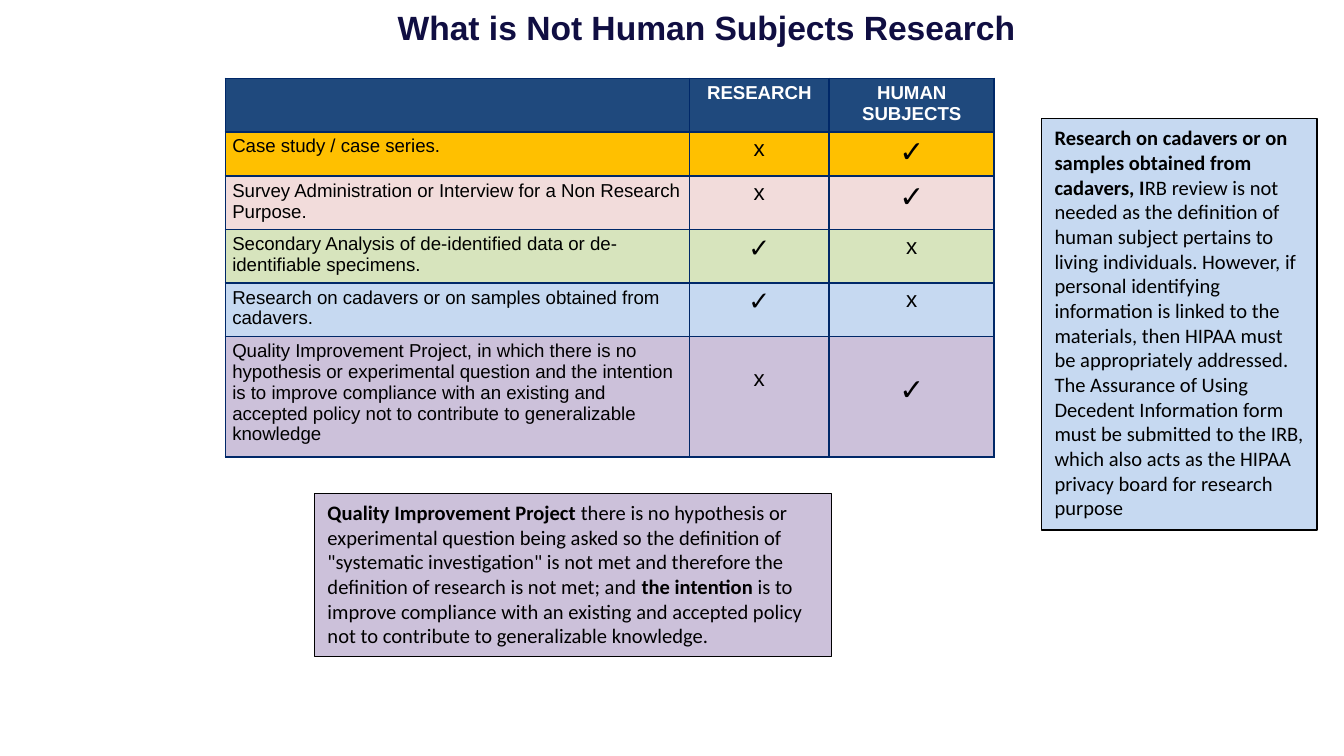
from dataclasses import dataclass

import pptx
import pptx.dml.color
import pptx.enum.shapes
import pptx.enum.text
import pptx.oxml
import pptx.oxml.ns
import pptx.util
from pptx.dml.color import RGBColor
from pptx.util import Cm

WHITE = RGBColor(0xFF, 0xFF, 0xFF)
BLACK = RGBColor(0x00, 0x00, 0x00)
TITLE_NAVY = RGBColor(0x10, 0x0E, 0x42)
BORDER_NAVY = RGBColor(0x00, 0x28, 0x68)
HEADER_BLUE = RGBColor(0x1F, 0x49, 0x7D)
AMBER = RGBColor(0xFF, 0xC0, 0x00)
ROSE = RGBColor(0xF2, 0xDC, 0xDB)
GREEN = RGBColor(0xD7, 0xE4, 0xBD)
SKY = RGBColor(0xC6, 0xD9, 0xF1)
LILAC = RGBColor(0xCC, 0xC1, 0xDA)

LEFT = pptx.enum.text.PP_ALIGN.LEFT
CENTER = pptx.enum.text.PP_ALIGN.CENTER
TOP = pptx.enum.text.MSO_ANCHOR.TOP
CELL_MARGIN_TOP = 0.08


@dataclass(frozen=True)
class CellText:
    text: str
    size: int = 10
    align: int = CENTER
    margin_top: float = CELL_MARGIN_TOP


@dataclass(frozen=True)
class TableRow:
    height: float
    fill: RGBColor
    cells: tuple[CellText, ...]
    color: RGBColor = BLACK
    bold: bool = False


@dataclass(frozen=True)
class Run:
    text: str
    bold: bool = False


@dataclass(frozen=True)
class Note:
    left: float
    top: float
    width: float
    height: float
    fill: RGBColor
    runs: tuple[Run, ...]


def topic(text: str) -> CellText:
    return CellText(text, align=LEFT)


NO = CellText("x", 12)
YES = CellText("✓", 14)
LARGE_YES = CellText("✓", 16)

COLUMN_WIDTHS = (8.77, 2.64, 3.12)
ROWS = (
    TableRow(0.93, HEADER_BLUE, (CellText(""), CellText("RESEARCH"), CellText("HUMAN SUBJECTS")), WHITE, True),
    TableRow(0.75, AMBER, (topic("Case study / case series."), NO, LARGE_YES)),
    TableRow(0.92, ROSE, (
        topic("Survey Administration or Interview for a Non Research Purpose."), NO, LARGE_YES)),
    TableRow(0.92, GREEN, (
        topic("Secondary Analysis of de-identified data or de-identifiable specimens."), YES, NO)),
    TableRow(0.92, SKY, (
        topic("Research on cadavers or on samples obtained from cadavers."), YES, NO)),
    TableRow(2.1, LILAC, (
        topic("Quality Improvement Project, in which there is no hypothesis or experimental question "
              "and the intention is to improve compliance with an existing and accepted policy "
              "not to contribute to generalizable knowledge"),
        CellText("x", 12, margin_top=0.56),
        CellText("✓", 16, margin_top=0.7))),
)

NOTES = (
    Note(19.68, 2.24, 5.21, 7.77, SKY, (
        Run("Research on cadavers or on samples obtained from cadavers, I", True),
        Run("RB review is not needed as the definition of human subject pertains to living "
            "individuals. However, if personal identifying information is linked to the materials, "
            "then HIPAA must be appropriately addressed. The Assurance of Using Decedent "
            "Information form must be submitted to the IRB, which also acts as the HIPAA privacy "
            "board for research purpose"))),
    Note(5.94, 9.32, 9.78, 3.08, LILAC, (
        Run("Quality Improvement Project ", True),
        Run("there is no hypothesis or experimental question being asked so the definition of "
            "\"systematic investigation\" is not met and therefore the definition of research is "
            "not met; and "),
        Run("the intention", True),
        Run(" is to improve compliance with an existing and accepted policy not to contribute to "
            "generalizable knowledge."))),
)


def style_font(paragraph, name: str, size: int, color: RGBColor) -> None:
    paragraph.font.name = name
    paragraph.font.size = pptx.util.Pt(size)
    paragraph.font.color.rgb = color


def add_title(slide, text: str) -> None:
    title = slide.shapes.add_textbox(Cm(2), Cm(-0.05), Cm(22.86), Cm(1.24))
    frame = title.text_frame
    frame.word_wrap = True
    frame.margin_top = Cm(0.18)
    frame.margin_right = Cm(0.4)
    paragraph = frame.paragraphs[0]
    paragraph.text = text
    paragraph.alignment = CENTER
    style_font(paragraph, "Arial", 18, TITLE_NAVY)
    paragraph.font.bold = True


def set_borders(cell, color: RGBColor) -> None:
    properties = cell._tc.get_or_add_tcPr()
    for position, side in enumerate(("lnL", "lnR", "lnT", "lnB")):
        border = pptx.oxml.parse_xml(
            f'<a:{side} {pptx.oxml.ns.nsdecls("a")} w="{pptx.util.Pt(1)}">'
            f'<a:solidFill><a:srgbClr val="{color}"/></a:solidFill></a:{side}>')
        properties.insert(position, border)


def fill_cell(cell, content: CellText, row: TableRow) -> None:
    cell.fill.solid()
    cell.fill.fore_color.rgb = row.fill
    cell.margin_left = cell.margin_right = Cm(0.13)
    cell.margin_top = Cm(content.margin_top)
    cell.margin_bottom = Cm(0.08)
    cell.vertical_anchor = TOP
    paragraph = cell.text_frame.paragraphs[0]
    paragraph.text = content.text
    paragraph.alignment = content.align
    style_font(paragraph, "Arial", content.size, row.color)
    paragraph.font.bold = row.bold
    set_borders(cell, BORDER_NAVY)


def add_criteria_table(slide) -> None:
    table = slide.shapes.add_table(
        len(ROWS), len(COLUMN_WIDTHS), Cm(4.26), Cm(1.48),
        Cm(sum(COLUMN_WIDTHS)), Cm(sum(row.height for row in ROWS))).table
    for column, width in zip(table.columns, COLUMN_WIDTHS):
        column.width = Cm(width)
    for table_row, row in zip(table.rows, ROWS):
        table_row.height = Cm(row.height)
        for cell, content in zip(table_row.cells, row.cells):
            fill_cell(cell, content, row)


def add_note(slide, note: Note) -> None:
    shape = slide.shapes.add_shape(
        pptx.enum.shapes.MSO_SHAPE.RECTANGLE,
        Cm(note.left), Cm(note.top), Cm(note.width), Cm(note.height))
    shape.shadow.inherit = False
    shape.fill.solid()
    shape.fill.fore_color.rgb = note.fill
    shape.line.color.rgb = BLACK
    shape.line.width = pptx.util.Pt(0.75)
    frame = shape.text_frame
    frame.word_wrap = True
    frame.vertical_anchor = TOP
    paragraph = frame.paragraphs[0]
    paragraph.alignment = LEFT
    style_font(paragraph, "Calibri", 11, BLACK)
    for part in note.runs:
        run = paragraph.add_run()
        run.text = part.text
        run.font.bold = part.bold


def main() -> None:
    presentation = pptx.Presentation()
    presentation.slide_width = Cm(25.4)
    presentation.slide_height = Cm(14.28)
    slide = presentation.slides.add_slide(presentation.slide_layouts[6])
    add_title(slide, "What is Not Human Subjects Research")
    add_criteria_table(slide)
    for note in NOTES:
        add_note(slide, note)
    presentation.save("out.pptx")


if __name__ == "__main__":
    main()
